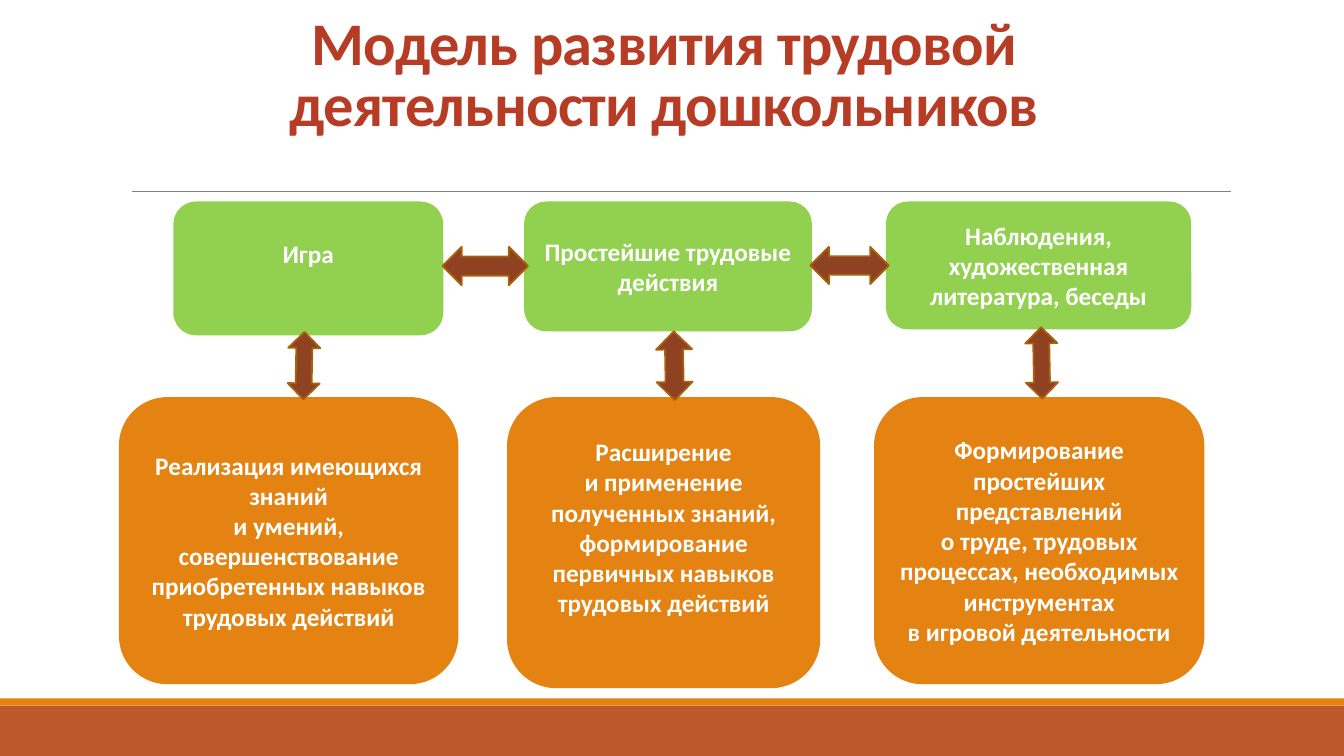
from pptx import Presentation
from pptx.dml.color import RGBColor
from pptx.enum.shapes import MSO_CONNECTOR as LineKind, MSO_SHAPE as Preset
from pptx.enum.text import MSO_ANCHOR as Anchor, MSO_AUTO_SIZE as AutoSize, PP_ALIGN as Align
from pptx.oxml.ns import qn
from pptx.util import Cm, Pt

WHITE = RGBColor(0xFF, 0xFF, 0xFF)
RED = RGBColor(0xB7, 0x3C, 0x26)
GREEN = RGBColor(0x92, 0xD0, 0x50)
ORANGE = RGBColor(0xE4, 0x83, 0x12)
RUST = RGBColor(0xBD, 0x58, 0x2C)
BROWN = RGBColor(0x8E, 0x42, 0x21)
ARROW_EDGE = RGBColor(0xA9, 0x61, 0x0D)
GRAY = RGBColor(0x80, 0x80, 0x80)

TITLE_FONT = {"name": "Calibri", "size": Pt(43.2), "bold": True}
BLOCK_FONT = {"name": "Calibri", "size": Pt(18), "bold": True}


def add_figure(preset, box, fill, edge=None):
    figure = slide.shapes.add_shape(preset, *[Cm(length) for length in box])
    figure.shadow.inherit = False
    figure.fill.solid()
    figure.fill.fore_color.rgb = fill
    if edge is None:
        figure.line.fill.background()
    else:
        figure.line.color.rgb = edge
        figure.line.width = Pt(1.25)
    return figure


def write_lines(frame, lines, font_format, color):
    frame.word_wrap = True
    frame.auto_size = AutoSize.NONE
    frame.text = "\n".join(lines)
    for paragraph in frame.paragraphs:
        paragraph.alignment = Align.CENTER
        for run in paragraph.runs:
            run.font.color.rgb = color
            for attribute, value in font_format.items():
                setattr(run.font, attribute, value)


deck = Presentation()
deck.slide_width, deck.slide_height = Cm(33.87), Cm(19.05)
slide = deck.slides.add_slide(deck.slide_layouts[5])

add_figure(Preset.RECTANGLE, (0, 17.78, 33.87, 1.27), RUST)
add_figure(Preset.RECTANGLE, (0, 17.6, 33.87, 0.18), ORANGE)

rule = slide.shapes.add_connector(LineKind.STRAIGHT, Cm(3.33), Cm(4.82), Cm(31.01), Cm(4.82))
rule.line.color.rgb = GRAY
rule.line.width = Pt(0.5)
properties = rule._element.spPr
properties.append(properties.makeelement(qn("a:effectLst"), {}))

title = slide.shapes.title
title.left, title.top, title.width, title.height = Cm(4.88), Cm(1.78), Cm(23.7), Cm(3.43)
write_lines(title.text_frame, ["Модель развития трудовой деятельности дошкольников"], TITLE_FONT, RED)
title.text_frame.vertical_anchor = Anchor.BOTTOM
title.text_frame.margin_bottom = Cm(1.7)
heading = title.text_frame.paragraphs[0]
heading.line_spacing = 0.85
heading.runs[0].font._element.set("spc", "-50")

MEANS_TOP, RESULT_TOP = 5.1, 10.03
blocks = [
    ((4.39, MEANS_TOP, 6.76, 3.33), GREEN, 0.9, ["Игра"]),
    ((13.23, MEANS_TOP, 7.21, 3.23), GREEN, 0.13, ["Простейшие трудовые", "действия"]),
    ((22.35, MEANS_TOP, 7.65, 3.18), GREEN, 0.13, ["Наблюдения, художественная литература, беседы"]),
    ((3.02, RESULT_TOP, 8.51, 7.19), ORANGE, 0.13, [
        "Реализация имеющихся знаний",
        "и умений, совершенствование приобретенных навыков трудовых действий"]),
    ((12.8, RESULT_TOP, 7.85, 7.29), ORANGE, 0.9, [
        "Расширение",
        "и применение полученных знаний, формирование первичных навыков трудовых действий"]),
    ((22.05, RESULT_TOP, 8.28, 7.19), ORANGE, 0.13, [
        "Формирование простейших представлений",
        "о труде, трудовых процессах, необходимых инструментах",
        "в игровой деятельности"]),
]
for box, color, bottom_inset, lines in blocks:
    block = add_figure(Preset.ROUNDED_RECTANGLE, box, color, color)
    write_lines(block.text_frame, lines, BLOCK_FONT, WHITE)
    block.text_frame.vertical_anchor = Anchor.MIDDLE
    block.text_frame.margin_bottom = Cm(bottom_inset)

arrows = [
    ((11.15, 6.22, 2.16, 0.97), 0),
    ((20.42, 6.22, 1.98, 0.94), 0),
    ((6.81, 8.81, 1.7, 0.81), 91),
    ((16.13, 8.76, 1.73, 0.91), 269),
    ((25.35, 8.74, 1.8, 0.81), 269),
]
for box, angle in arrows:
    arrow = add_figure(Preset.LEFT_RIGHT_ARROW, box, BROWN, ARROW_EDGE)
    arrow.rotation = angle

deck.save("out.pptx")
